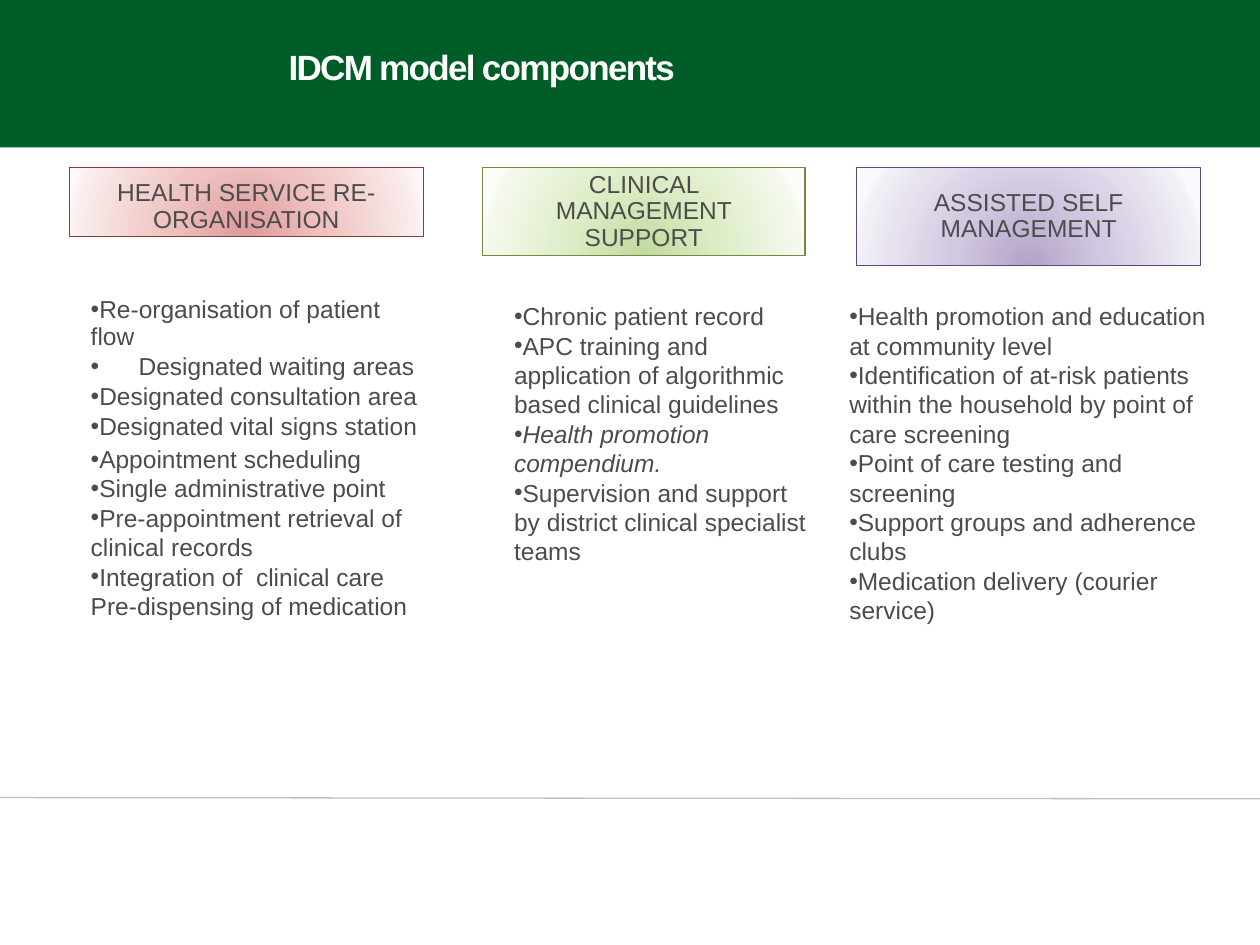
from lxml import etree
from pptx import Presentation
from pptx.dml.color import RGBColor
from pptx.enum.shapes import MSO_CONNECTOR, MSO_SHAPE
from pptx.enum.text import MSO_ANCHOR, MSO_AUTO_SIZE, PP_ALIGN
from pptx.oxml import parse_xml
from pptx.oxml.ns import nsdecls, qn
from pptx.util import Inches, Pt

RECT = MSO_SHAPE.RECTANGLE
STRAIGHT = MSO_CONNECTOR.STRAIGHT
TOP, MIDDLE = MSO_ANCHOR.TOP, MSO_ANCHOR.MIDDLE
LEFT, CENTER = PP_ALIGN.LEFT, PP_ALIGN.CENTER
NO_FIT = MSO_AUTO_SIZE.NONE

COLORS = {
    "header": "005D28", "white": "FFFFFF", "text": "4C4C4C", "rule": "BFBFBF",
    "red": "8F3A38", "green": "738B41", "purple": "5F4979",
}
GRADIENTS = {
    "red": ("DD9A99", "EFC2C1", "F9ECEC", "FEF8F8"),
    "green": ("C2D99D", "DCECC4", "F4F9ED", "FBFEF8"),
    "purple": ("B2A3C8", "D2C9E1", "F1EEF5", "FAF9FC"),
}
STOPS = (0, 43, 93, 100)
TIGHT = {"line_spacing": 0.9, "space_after": Pt(2)}
NESTED = {"level": 1, **TIGHT}

HEADINGS = [
    ("HEALTH SERVICE RE-ORGANISATION", "red", (0.55, 1.33, 2.81, 0.55), 0.08),
    ("CLINICAL MANAGEMENT SUPPORT", "green", (3.83, 1.33, 2.56, 0.7), 0),
    ("ASSISTED SELF MANAGEMENT", "purple", (6.8, 1.33, 2.73, 0.78), 0),
]
LISTS = [
    (2, (0.62, 2.31, 2.81, 2.72), [
        ("Re-organisation of patient flow", TIGHT),
        ("Designated waiting areas", {"hang": 0.38, **NESTED}),
        ("Designated consultation area", NESTED),
        ("Designated vital signs station", NESTED),
        ("Appointment scheduling", {}),
        ("Single administrative point", {}),
        ("Pre-appointment retrieval of clinical records", {}),
        ("Integration of  clinical care", {}),
        ("Pre-dispensing of medication", {"bullet": False}),
    ]),
    (4, (3.98, 2.34, 2.58, 2.22), [
        ("Chronic patient record", {}),
        ("APC training and application of algorithmic based clinical guidelines", {}),
        ("Health promotion compendium.", {"italic": True}),
        ("Supervision and support by district clinical specialist teams", {}),
    ]),
    (1, (6.64, 2.34, 3.05, 2.69), [
        ("Health promotion and education at community level", {}),
        ("Identification of at-risk patients within the household by point of care screening", {}),
        ("Point of care testing and screening", {}),
        ("Support groups and adherence clubs", {}),
        ("Medication delivery (courier service)", {}),
    ]),
]


def set_attrs(obj, values):
    for name, value in values.items():
        setattr(obj, name, value)


class SlideBuilder:
    font_name = "Arial"

    def __init__(self, s):
        self.s = s

    def color(self, name):
        return RGBColor.from_string(COLORS[name])

    def place(self, sp, box):
        names = ("left", "top", "width", "height")
        set_attrs(sp, dict(zip(names, map(Inches, box))))

    def format_font(self, font, size, color, **values):
        set_attrs(font, {"name": self.font_name, "size": Pt(size), **values})
        font.color.rgb = self.color(color)

    def rectangle(self, box):
        sp = self.s.shapes.add_shape(RECT, *map(Inches, box))
        sp.shadow.inherit = False
        return sp

    def header(self, box):
        sp = self.rectangle(box)
        sp.fill.solid()
        sp.fill.fore_color.rgb = self.color("header")
        sp.line.fill.background()
        self.s.shapes._spTree.insert(2, sp._element)

    def rule(self, start, end):
        line = self.s.shapes.add_connector(STRAIGHT, *map(Inches, start + end))
        line.line.color.rgb = self.color("rule")
        line.line.width = Pt(0.75)
        etree.SubElement(line._element.spPr, qn("a:effectLst"))

    def title(self, text, box):
        sp = self.s.shapes.title
        self.place(sp, box)
        tf = sp.text_frame
        set_attrs(tf, {"text": text, "vertical_anchor": TOP, "auto_size": NO_FIT})
        p = tf.paragraphs[0]
        p.alignment = LEFT
        r = p.runs[0]
        self.format_font(r.font, 20, "white", bold=True)
        r.font._element.set("spc", "-100")

    def heading(self, text, color, box, top_margin):
        sp = self.rectangle(box)
        sp.line.color.rgb = self.color(color)
        sp.line.width = Pt(0.75)
        stops = "".join(
            f'<a:gs pos="{pos * 1000}"><a:srgbClr val="{value}"/></a:gs>'
            for pos, value in zip(STOPS, GRADIENTS[color]))
        sp._element.spPr.find(qn("a:prstGeom")).addnext(parse_xml(
            f'<a:gradFill {nsdecls("a")} rotWithShape="1"><a:gsLst>{stops}</a:gsLst>'
            '<a:path path="circle"><a:fillToRect l="50000" t="130000" r="50000" '
            'b="-30000"/></a:path></a:gradFill>'))
        tf = sp.text_frame
        set_attrs(tf, {
            "text": text, "word_wrap": True, "vertical_anchor": MIDDLE,
            "margin_left": Inches(0.13), "margin_right": Inches(0.13),
            "margin_top": Inches(top_margin), "margin_bottom": 0})
        p = tf.paragraphs[0]
        set_attrs(p, {"alignment": CENTER, "line_spacing": 0.9})
        self.format_font(p.runs[0].font, 14, "text")

    def bullet_list(self, idx, box, items):
        sp = self.s.placeholders[idx]
        self.place(sp, box)
        tf = sp.text_frame
        set_attrs(tf, {"vertical_anchor": TOP, "auto_size": NO_FIT, "word_wrap": True})
        for i, (text, values) in enumerate(items):
            p = tf.paragraphs[0] if i == 0 else tf.add_paragraph()
            self.list_item(p, text, **values)

    def list_item(self, p, text, bullet=True, hang=0, italic=False, **values):
        pPr = p._p.get_or_add_pPr()
        pPr.set("marL", str(Inches(hang)))
        pPr.set("indent", str(-Inches(hang)))
        if bullet:
            etree.SubElement(pPr, qn("a:buChar")).set("char", "•")
        else:
            etree.SubElement(pPr, qn("a:buNone"))
        set_attrs(p, {"alignment": LEFT, "space_before": Pt(0), **values})
        r = p.add_run()
        r.text = text
        self.format_font(r.font, 14, "text", bold=False, italic=italic)

    def remove_empty_placeholders(self):
        for sp in list(self.s.placeholders):
            if not sp.text_frame.text:
                sp._element.getparent().remove(sp._element)


def main():
    prs = Presentation()
    prs.slide_width, prs.slide_height = Inches(10), Inches(7.5)
    slide = SlideBuilder(prs.slides.add_slide(prs.slide_layouts[4]))
    slide.header((0, 0, 10, 1.17))
    slide.rule((0, 6.33), (10, 6.34))
    slide.title("IDCM model components", (2.19, 0.31, 4.29, 0.44))
    for heading in HEADINGS:
        slide.heading(*heading)
    for bullets in LISTS:
        slide.bullet_list(*bullets)
    slide.remove_empty_placeholders()
    prs.save("out.pptx")


if __name__ == "__main__":
    main()
